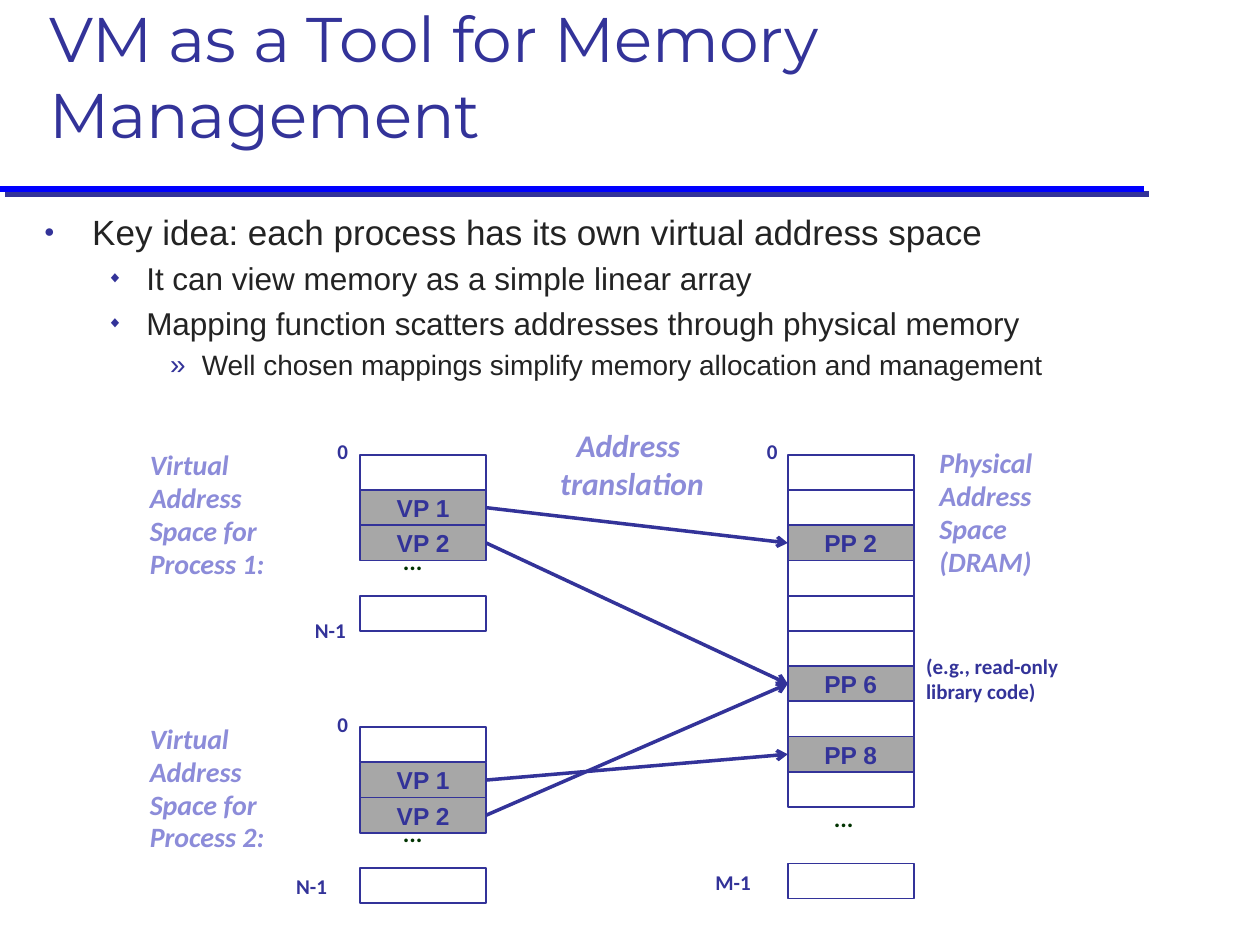
from dataclasses import dataclass

from pptx import Presentation
from pptx import util as u
from pptx.dml.color import RGBColor
from pptx.enum import shapes as sh
from pptx.enum import text as tx
from pptx.oxml import parse_xml
from pptx.oxml.ns import nsdecls

NAVY, LILAC, GRAY, GREEN = "333399", "8C8CD9", "A7A7A7", "003300"
ROW, WIDE = 0.71, 2.54  # page cell height and width in cm


@dataclass
class Stack:
    x: float
    y: float
    rows: int
    last: float  # row position of the final, detached cell
    names: dict[int, str]
    dots: tuple[float, float]


@dataclass
class Label:
    text: str
    x: float
    y: float
    w: float
    h: float


@dataclass
class Bullet:
    text: str
    size: int
    left: float
    hang: float
    mark: str
    scale: int
    gap: float


def color(code: str) -> RGBColor:
    return RGBColor.from_string(code)


def add_xml(parent, body: str) -> None:
    """Append one DrawingML element, given without its a: namespace."""
    tag, rest = body.split(" ", 1)
    parent.append(parse_xml(f"<a:{tag} {nsdecls('a')} {rest}"))


def write(frame, text: str, size=12, font="Calibri", ink=NAVY, bold=True,
          italic=False, align=None, line=None, before=None):
    """Add one paragraph per line of text; return the last one."""
    for part in text.split("\n"):
        para = frame.add_paragraph() if frame.text else frame.paragraphs[0]
        para.alignment, para.line_spacing = align, line
        if before:
            para.space_before = u.Pt(before)
        run = para.add_run()
        run.text = part
        run.font.name, run.font.size = font, u.Pt(size)
        run.font.bold, run.font.italic = bold, italic
        run.font.color.rgb = color(ink)
    return para


def add_box(slide, x: float, y: float, w: float, h: float, wrap=True, grow=True):
    box = slide.shapes.add_textbox(u.Cm(x), u.Cm(y), u.Cm(w), u.Cm(h))
    frame = box.text_frame
    frame.word_wrap = wrap
    fit = tx.MSO_AUTO_SIZE
    frame.auto_size = fit.SHAPE_TO_FIT_TEXT if grow else fit.NONE
    return frame


def add_label(slide, item: Label, wrap=False, **style) -> None:
    frame = add_box(slide, item.x, item.y, item.w, item.h, wrap)
    write(frame, item.text, **style)


def add_bullet(frame, item: Bullet) -> None:
    para = write(frame, item.text, size=item.size, font="Arial", ink="232323",
                 bold=False, before=item.gap)
    props = para._p.get_or_add_pPr()
    props.set("marL", str(u.Cm(item.left)))
    props.set("indent", str(-u.Cm(item.hang)))
    add_xml(props, f'buClr ><a:srgbClr val="{NAVY}"/></a:buClr>')
    add_xml(props, f'buSzPct val="{item.scale * 1000}"/>')
    add_xml(props, 'buFont typeface="Arial"/>')
    add_xml(props, f'buChar char="{item.mark}"/>')


def add_cell(slide, x: float, y: float, name: str = ""):
    cell = slide.shapes.add_shape(sh.MSO_SHAPE.RECTANGLE, u.Cm(x), u.Cm(y),
                                  u.Cm(WIDE), u.Cm(ROW))
    cell.shadow.inherit = False
    cell.line.color.rgb, cell.line.width = color(NAVY), u.Pt(1)
    if name:
        cell.fill.solid()
        cell.fill.fore_color.rgb = color(GRAY)
        cell.text_frame.vertical_anchor = tx.MSO_ANCHOR.MIDDLE
        write(cell.text_frame, name, size=14, font="Arial",
              align=tx.PP_ALIGN.CENTER)
    else:
        cell.fill.background()
    return cell


def add_stack(slide, item: Stack) -> dict:
    """Draw the cells of an address space; return the named ones."""
    cells = {}
    for row in [*range(item.rows), item.last]:
        name = item.names.get(row, "")
        cell = add_cell(slide, item.x, item.y + row * ROW, name)
        if name:
            cells[name] = cell
    dx, dy = item.dots
    add_label(slide, Label("...", item.x + dx, item.y + dy, 0.91, 0.79),
              size=14, ink=GREEN, line=0.88, before=9)
    return cells


def add_line(slide, ends: tuple, ink: str, width: float):
    link = slide.shapes.add_connector(sh.MSO_CONNECTOR.STRAIGHT,
                                      *(u.Cm(n) for n in ends))
    link.line.color.rgb, link.line.width = color(ink), u.Pt(width)
    return link


def add_arrow(slide, start, end) -> None:
    link = add_line(slide, (0, 0, 1, 1), NAVY, 2)
    link.begin_connect(start, 3)
    link.end_connect(end, 1)
    add_xml(link.line._get_or_add_ln(), 'tailEnd type="arrow"/>')
    add_xml(link._element.spPr, "effectLst />")


BULLETS = [
    Bullet("Key idea: each process has its own virtual address space",
           20, 0.97, 0.97, "●", 50, 4),
    Bullet("It can view memory as a simple linear array",
           18, 2.06, 0.79, "◆", 50, 4),
    Bullet("Mapping function scatters addresses through physical memory",
           18, 2.06, 0.79, "◆", 50, 4),
    Bullet("Well chosen mappings simplify memory allocation and management",
           16, 3.18, 0.64, "»", 100, 3.5),
]
PAGES = {1: "VP 1", 2: "VP 2"}
FIRST = Stack(7.26, 9.17, 3, 4, PAGES, (0.61, 1.78))
SECOND = Stack(7.26, 14.66, 3, 4, PAGES, (0.61, 1.78))
DRAM = Stack(15.88, 9.17, 10, 11.6, {2: "PP 2", 6: "PP 6", 8: "PP 8"},
             (0.68, 6.98))
SPACES = [
    Label("Virtual Address Space for Process 1:", 2.77, 8.94, 3.81, 2.92),
    Label("Virtual Address Space for Process 2:", 2.77, 14.45, 3.81, 2.92),
    Label("Physical\nAddress\nSpace (DRAM)", 18.69, 8.89, 2.97, 2.92),
]
BOUNDS = [
    Label("0", 6.55, 8.74, 0.71, 0.76),
    Label("N-1", 6.1, 12.34, 1.14, 0.76),
    Label("0", 6.55, 14.25, 0.71, 0.76),
    Label("N-1", 5.72, 17.5, 1.14, 0.76),
    Label("0", 15.21, 8.74, 0.71, 0.76),
    Label("M-1", 14.17, 17.42, 1.22, 0.76),
]


def main() -> None:
    deck = Presentation()
    deck.slide_width, deck.slide_height = u.Cm(25.4), u.Cm(19.05)
    slide = deck.slides.add_slide(deck.slide_layouts[6])

    # Title and its shadowed rule
    rule = add_line(slide, (0, 3.81, 23.06, 3.81), "0000FF", 3.5)
    add_xml(rule._element.spPr,
            f'effectLst ><a:outerShdw dist="{u.Pt(4.2)}" dir="2700000">'
            f'<a:srgbClr val="{NAVY}"/></a:outerShdw></a:effectLst>')
    title = add_box(slide, 0.74, 1.57, 23.93, 1.6, grow=False)
    title.vertical_anchor = tx.MSO_ANCHOR.BOTTOM
    write(title, "VM as a Tool for Memory Management", size=36,
          font="Montserrat", bold=False)

    # Key points
    body = add_box(slide, 0.64, 4.11, 24.33, 5.28, grow=False)
    for item in BULLETS:
        add_bullet(body, item)

    # Address spaces
    one, two, real = (add_stack(slide, s) for s in (FIRST, SECOND, DRAM))

    # Labels
    for item in SPACES:
        add_label(slide, item, wrap=True, size=16, ink=LILAC, italic=True,
                  line=0.98)
    for item in BOUNDS:
        add_label(slide, item, line=0.98)
    add_label(slide, Label("(e.g., read-only\nlibrary code)",
                           18.42, 13.08, 4.04, 1.24), wrap=True, line=0.98)

    # Address translation
    for start, end in [(one["VP 1"], "PP 2"), (one["VP 2"], "PP 6"),
                       (two["VP 2"], "PP 6"), (two["VP 1"], "PP 8")]:
        add_arrow(slide, start, real[end])
    add_label(slide, Label("Address \ntranslation", 11, 8.46, 3.48, 1.8),
              size=18, ink=LILAC, italic=True, align=tx.PP_ALIGN.CENTER)

    deck.save("out.pptx")


if __name__ == "__main__":
    main()
